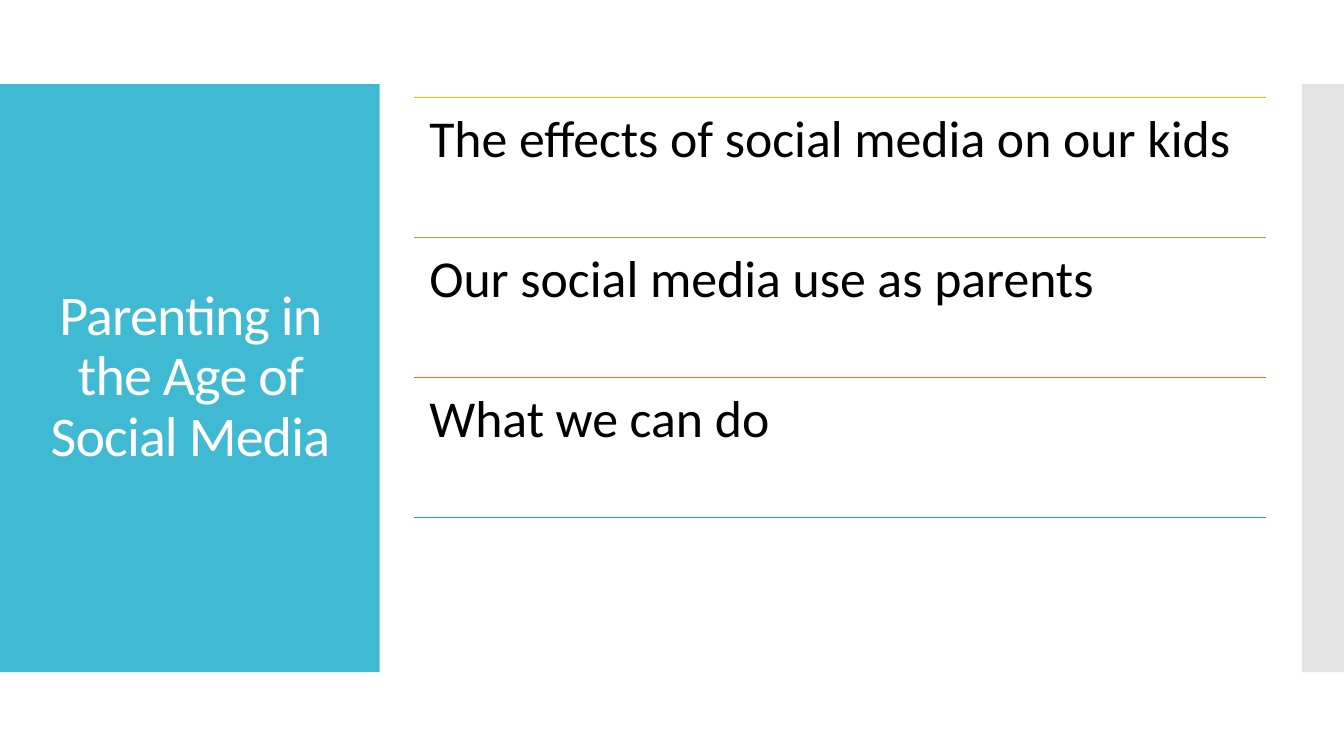
from dataclasses import dataclass

from lxml import etree
from pptx import Presentation
from pptx.dml.color import RGBColor
from pptx.enum.shapes import MSO_CONNECTOR, MSO_SHAPE
from pptx.enum.text import MSO_ANCHOR, MSO_AUTO_SIZE, PP_ALIGN
from pptx.oxml.ns import qn
from pptx.util import Cm, Pt

RECTANGLE = MSO_SHAPE.RECTANGLE
STRAIGHT = MSO_CONNECTOR.STRAIGHT
TOP, MIDDLE = MSO_ANCHOR.TOP, MSO_ANCHOR.MIDDLE
LEFT, CENTER = PP_ALIGN.LEFT, PP_ALIGN.CENTER
NO_FIT = MSO_AUTO_SIZE.NONE

TITLE = "Parenting in the Age of Social Media"
TOPICS = [
    "The effects of social media on our kids",
    "Our social media use as parents",
    "What we can do",
]


@dataclass(frozen=True)
class Theme:
    font: str = "Calibri"
    title_size: float = 40
    topic_size: float = 37
    title_color: str = "FFFFFF"
    topic_color: str = "000000"
    panel: str = "40BAD2"
    strip: str = "C8C8C8"
    strip_alpha: int = 50
    rules: tuple = ("FAB900", "90BB23", "EE7008", "1AB39F")
    rule_width: float = 0.85


THEME = Theme()
SLIDE_WIDTH, SLIDE_HEIGHT = 33.87, 19.05
BAND_TOP, BAND_HEIGHT = 2.12, 14.82
PANEL_WIDTH, STRIP_WIDTH = 9.57, 1.06
TITLE_AREA = (0.71, 3.12, 8.18, 12.78)
LIST_LEFT, LIST_TOP, LIST_WIDTH = 10.44, 2.46, 21.46
ROW_HEIGHT = 3.53
TOPIC_INSET = 0.38


def add_band(slide, left, width, color):
    band = slide.shapes.add_shape(
        RECTANGLE, Cm(left), Cm(BAND_TOP), Cm(width), Cm(BAND_HEIGHT))
    band.shadow.inherit = False
    band.fill.solid()
    band.fill.fore_color.rgb = RGBColor.from_string(color)
    band.line.fill.background()
    return band


def set_alpha(shape, percent):
    color = shape.fill._xPr.find(qn("a:solidFill"))[0]
    etree.SubElement(color, qn("a:alpha"), val=str(percent * 1000))


def write_text(box, text, size, color, align, anchor):
    frame = box.text_frame
    frame.text = text
    frame.word_wrap = True
    frame.auto_size = NO_FIT
    frame.vertical_anchor = anchor
    para = frame.paragraphs[0]
    para.alignment = align
    para.line_spacing = 0.9
    span = para.runs[0]
    span.font.name = THEME.font
    span.font.size = Pt(size)
    span.font.color.rgb = RGBColor.from_string(color)
    return span


def add_title(slide):
    title = slide.shapes.title
    title.left, title.top, title.width, title.height = map(Cm, TITLE_AREA)
    span = write_text(title, TITLE, THEME.title_size, THEME.title_color, CENTER, MIDDLE)
    span.font._element.set("spc", "-60")
    slide.shapes._spTree.append(title._element)


def add_rule(slide, top, color):
    rule = slide.shapes.add_connector(
        STRAIGHT, Cm(LIST_LEFT), Cm(top), Cm(LIST_LEFT + LIST_WIDTH), Cm(top))
    rule.line.color.rgb = RGBColor.from_string(color)
    rule.line.width = Pt(THEME.rule_width)
    etree.SubElement(rule._element.spPr, qn("a:effectLst"))


def add_topic(slide, top, text):
    box = slide.shapes.add_textbox(
        Cm(LIST_LEFT), Cm(top), Cm(LIST_WIDTH), Cm(ROW_HEIGHT))
    write_text(box, text, THEME.topic_size, THEME.topic_color, LEFT, TOP)
    frame = box.text_frame
    frame.margin_left = frame.margin_right = Cm(TOPIC_INSET)
    frame.margin_top = frame.margin_bottom = Cm(TOPIC_INSET)


def main():
    deck = Presentation()
    deck.slide_width, deck.slide_height = Cm(SLIDE_WIDTH), Cm(SLIDE_HEIGHT)
    page = deck.slides.add_slide(deck.slide_layouts.get_by_name("Title Only"))

    add_band(page, 0, PANEL_WIDTH, THEME.panel)
    strip = add_band(page, SLIDE_WIDTH - STRIP_WIDTH, STRIP_WIDTH, THEME.strip)
    set_alpha(strip, THEME.strip_alpha)
    add_title(page)

    for row, color in enumerate(THEME.rules):
        add_rule(page, LIST_TOP + row * ROW_HEIGHT, color)
    for row, topic in enumerate(TOPICS):
        add_topic(page, LIST_TOP + row * ROW_HEIGHT, topic)

    deck.save("out.pptx")


if __name__ == "__main__":
    main()
